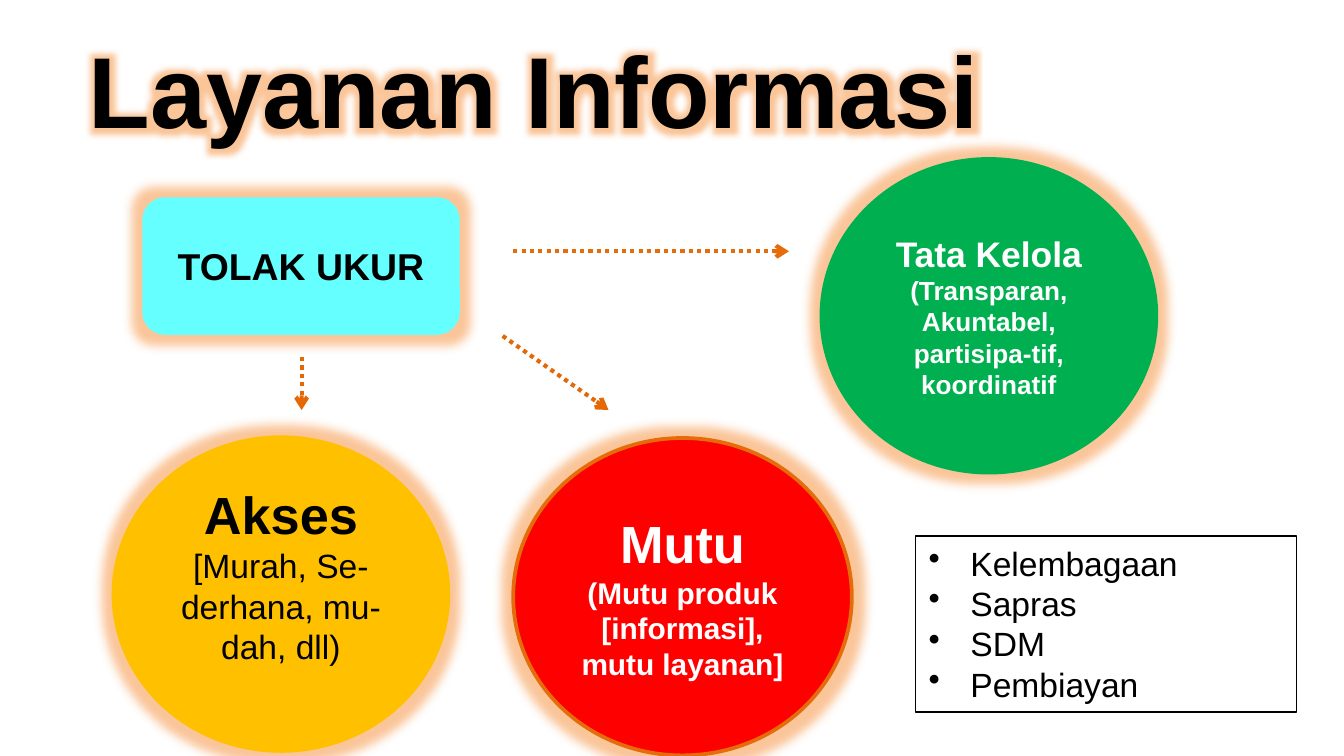
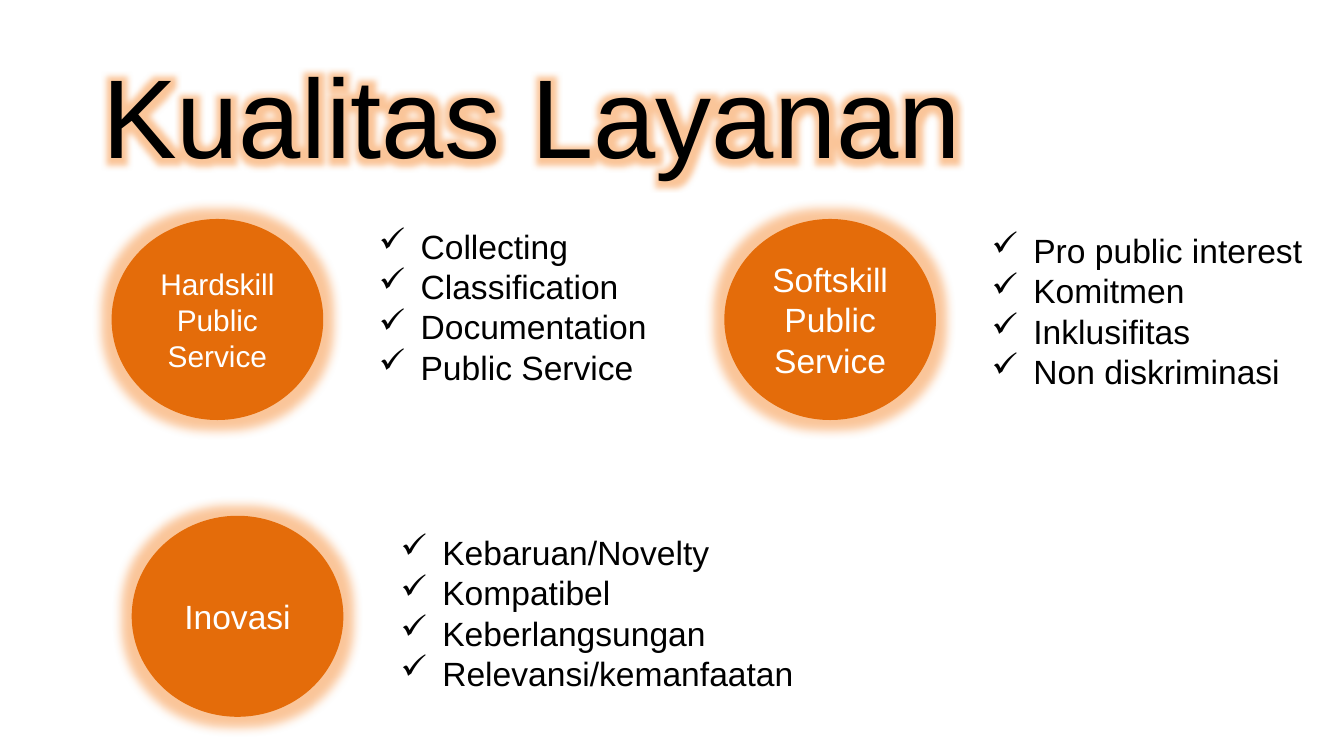
import pptx
import pptx.util
import pptx.dml.color
import pptx.enum.dml
import pptx.enum.shapes
import pptx.enum.text
import pptx.oxml
import pptx.oxml.ns
from lxml import etree

Cm = pptx.util.Cm
Pt = pptx.util.Pt
RGBColor = pptx.dml.color.RGBColor
Shape = pptx.enum.shapes.MSO_SHAPE
Align = pptx.enum.text.PP_ALIGN
Anchor = pptx.enum.text.MSO_ANCHOR

BLACK = RGBColor(0x00, 0x00, 0x00)
WHITE = RGBColor(0xFF, 0xFF, 0xFF)
ORANGE = RGBColor(0xE4, 0x6C, 0x0A)
DEEP_ORANGE = RGBColor(0xE4, 0x69, 0x04)
GLOW = RGBColor(0xF7, 0x96, 0x46)
GREEN = RGBColor(0x00, 0xB0, 0x50)
RED = RGBColor(0xFF, 0x00, 0x00)
AMBER = RGBColor(0xFF, 0xC0, 0x00)
CYAN = RGBColor(0x66, 0xFF, 0xFF)

FONT = "Arial"
BIG_CIRCLE = (6.4, 6.0)
SMALL_CIRCLE = (4.0, 3.8)
LIST_HEIGHT = 3.33
LIST_INDENT = 0.79


def add_glow(properties):
    """Give shape or run properties the orange halo."""
    for old in properties.findall(pptx.oxml.ns.qn("a:effectLst")):
        properties.remove(old)
    properties.append(pptx.oxml.parse_xml(
        f'<a:effectLst {pptx.oxml.ns.nsdecls("a")}><a:glow rad="139700">'
        f'<a:srgbClr val="{GLOW}"><a:alpha val="55000"/></a:srgbClr>'
        '</a:glow></a:effectLst>'))


def add_text(frame, text, size=18, color=BLACK, bold=False,
             align=Align.LEFT, bullet=None, glow=False):
    """Add one paragraph, using the frame's first one while it is unused."""
    paragraph = frame.paragraphs[0]
    if paragraph.runs:
        paragraph = frame.add_paragraph()
    paragraph.alignment = align
    if bullet:
        marks = paragraph._p.get_or_add_pPr()
        marks.set("marL", str(Cm(LIST_INDENT)))
        marks.set("indent", str(-Cm(LIST_INDENT)))
        etree.SubElement(marks, pptx.oxml.ns.qn("a:buChar"), char=bullet)
    run = paragraph.add_run()
    run.text = text
    run.font.size = Pt(size)
    run.font.bold = bold
    run.font.color.rgb = color
    if glow:
        add_glow(run.font._element)
    run.font.name = FONT


def add_box(slide, left, top, width, height):
    box = slide.shapes.add_textbox(Cm(left), Cm(top), Cm(width), Cm(height))
    box.text_frame.word_wrap = True
    return box


def add_title(slide, text, left, top, **style):
    frame = add_box(slide, left, top, 21.89, 2.77).text_frame
    frame.vertical_anchor = Anchor.MIDDLE
    frame.margin_left = frame.margin_right = Cm(0.18)
    frame.margin_top = frame.margin_bottom = Cm(0.1)
    add_text(frame, text, glow=True, **style)


def add_glowing_shape(slide, kind, place, size, fill, paragraphs, outline=None):
    """Draw a haloed shape; paragraphs are (text, format) pairs."""
    shape = slide.shapes.add_shape(kind, *map(Cm, place + size))
    shape.fill.solid()
    shape.fill.fore_color.rgb = fill
    if outline:
        shape.line.color.rgb = outline
        shape.line.width = Pt(2)
    else:
        shape.line.fill.background()
    add_glow(shape._element.spPr)
    frame = shape.text_frame
    frame.word_wrap = True
    frame.vertical_anchor = Anchor.MIDDLE
    for text, style in paragraphs:
        add_text(frame, text, align=Align.CENTER, **style)
    return shape


def add_arrow(slide, start, end, color):
    arrow = slide.shapes.add_connector(
        pptx.enum.shapes.MSO_CONNECTOR.STRAIGHT, *map(Cm, start + end))
    arrow.line.color.rgb = color
    arrow.line.width = Pt(2.25)
    arrow.line.dash_style = pptx.enum.dml.MSO_LINE.ROUND_DOT
    etree.SubElement(arrow.line._get_or_add_ln(),
                     pptx.oxml.ns.qn("a:tailEnd"), type="arrow")
    etree.SubElement(arrow._element.spPr, pptx.oxml.ns.qn("a:effectLst"))


def add_list(slide, items, left, top, width, bullet):
    box = add_box(slide, left, top, width, LIST_HEIGHT)
    box.text_frame.auto_size = pptx.enum.text.MSO_AUTO_SIZE.SHAPE_TO_FIT_TEXT
    for item in items:
        add_text(box.text_frame, item, bullet=bullet)
    return box


def build_information_service(slide):
    add_title(slide, "Layanan Informasi", 1.5, 0.28, size=54, bold=True)

    # Three aspects of the service
    add_glowing_shape(slide, Shape.OVAL, (15.49, 2.97), BIG_CIRCLE, GREEN, [
        ("Tata Kelola", dict(size=19, bold=True, color=WHITE)),
        ("(Transparan, Akuntabel, partisipa-tif, koordinatif",
         dict(size=14, bold=True, color=WHITE))])
    add_glowing_shape(slide, Shape.OVAL, (9.7, 8.28), BIG_CIRCLE, RED, [
        ("Mutu", dict(size=28, bold=True, color=WHITE)),
        ("(Mutu produk [informasi], mutu layanan]",
         dict(size=16, bold=True, color=WHITE))], outline=ORANGE)
    access = add_glowing_shape(
        slide, Shape.OVAL, (2.11, 8.23), BIG_CIRCLE, AMBER, [
            ("Akses", dict(size=28, bold=True)),
            ("[Murah, Se- derhana, mu-dah, dll)", dict(size=18))])
    access.text_frame.margin_bottom = Cm(0.87)

    # Benchmark and the arrows leaving it
    add_glowing_shape(slide, Shape.ROUNDED_RECTANGLE, (2.69, 3.73), (6.0, 2.6),
                      CYAN, [("TOLAK UKUR", dict(size=20, bold=True))])
    add_arrow(slide, (9.7, 4.75), (14.91, 4.75), ORANGE)
    add_arrow(slide, (9.5, 6.35), (11.5, 7.75), DEEP_ORANGE)
    add_arrow(slide, (5.7, 6.75), (5.7, 7.75), DEEP_ORANGE)

    # Supporting factors
    factors = add_list(slide, ["Kelembagaan", "Sapras", "SDM", "Pembiayan"],
                       17.3, 10.13, 7.2, "•")
    factors.line.color.rgb = BLACK
    factors.line.width = Pt(0.75)


def build_service_quality(slide):
    add_title(slide, "Kualitas Layanan", 1.75, 0.76, size=60)

    # Each skill: circle place and text size, then list place, width and items
    skills = [
        ("Hardskill Public Service", (2.11, 4.14), 16, (6.91, 4.14), 6.8,
         ["Collecting", "Classification", "Documentation", "Public Service"]),
        ("Softskill Public Service", (13.69, 4.14), 18, (18.49, 4.22), 6.8,
         ["Pro public interest", "Komitmen", "Inklusifitas",
          "Non diskriminasi"]),
        ("Inovasi", (2.49, 9.75), 18, (7.32, 9.93), 7.98,
         ["Kebaruan/Novelty", "Kompatibel", "Keberlangsungan",
          "Relevansi/kemanfaatan"]),
    ]
    for skill, circle_place, size, list_place, list_width, items in skills:
        add_glowing_shape(slide, Shape.OVAL, circle_place, SMALL_CIRCLE, ORANGE,
                          [(skill, dict(size=size, color=WHITE))])
        add_list(slide, items, *list_place, list_width, "✓")


def main():
    deck = pptx.Presentation()
    deck.slide_width, deck.slide_height = Cm(25.4), Cm(14.29)
    blank = deck.slide_layouts[6]
    for build in (build_information_service, build_service_quality):
        build(deck.slides.add_slide(blank))
    deck.save("out.pptx")


if __name__ == "__main__":
    main()
